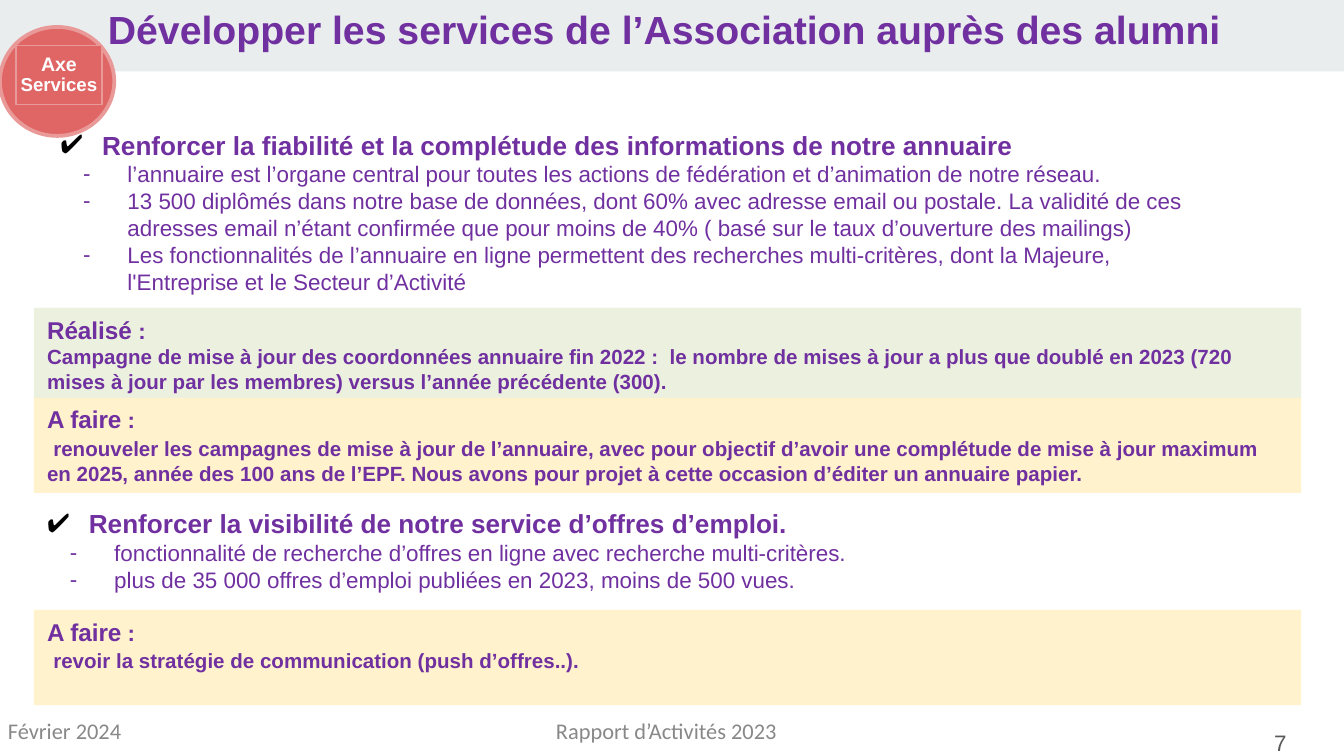
"""Build the slide on alumni services."""
import dataclasses
import typing

import pptx
import pptx.dml.color
import pptx.enum.shapes
import pptx.enum.text
import pptx.oxml.ns
import lxml.etree

Cm = pptx.util.Cm
Pt = pptx.util.Pt
Align = pptx.enum.text.PP_ALIGN
Kind = pptx.enum.shapes.MSO_SHAPE
Anchor = pptx.enum.text.MSO_ANCHOR

HUES = {
    "band": "E9EDEE", "violet": "7030A0", "red": "E06666", "pink": "EA9999",
    "green": "EBF1DE", "cream": "FFF2CC", "white": "FFFFFF", "black": "000000",
    "gray": "888888", "dark": "595959",
}
LEFT, WIDTH = 0.64, 23.95
PAD = (0.25, 0.13, 0.25, 0.13)
FLAT = (0, 0, 0, 0)


@dataclasses.dataclass
class Run:
    """Text with its own size, weight, font and hue."""
    text: str
    size: float
    bold: bool = True
    face: str = "Arial"
    hue: str = "violet"


@dataclasses.dataclass
class Para:
    """Runs that share margins, bullet and alignment."""
    runs: list[Run]
    margin: float = 0
    indent: float = 0
    mark: str = ""
    tint: str = "violet"
    align: typing.Any = Align.LEFT
    space: float = 1.0


@dataclasses.dataclass
class Box:
    """Place, look and text of one object."""
    place: tuple[float, float, float, float]
    paras: list[Para] = dataclasses.field(default_factory=list)
    fill: str = ""
    line: str = ""
    weight: float = 0
    kind: typing.Any = Kind.RECTANGLE
    pad: tuple[float, float, float, float] = PAD
    anchor: typing.Any = Anchor.TOP


def color(name: str) -> pptx.dml.color.RGBColor:
    """Return the colour of a named hue."""
    return pptx.dml.color.RGBColor.from_string(HUES[name])


def apply(target: typing.Any, values: dict[str, typing.Any]) -> None:
    """Set each value on the target."""
    for name, value in values.items():
        setattr(target, name, value)


def bullet(para: typing.Any, item: Para) -> None:
    """Add margins and the bullet mark."""
    qn = pptx.oxml.ns.qn
    props = para._p.get_or_add_pPr()
    props.set("marL", str(Cm(item.margin)))
    props.set("indent", str(Cm(item.indent)))
    if item.mark:
        tint = lxml.etree.SubElement(props, qn("a:buClr"))
        lxml.etree.SubElement(tint, qn("a:srgbClr"), val=HUES[item.tint])
        lxml.etree.SubElement(props, qn("a:buFont"), typeface="Arial")
        lxml.etree.SubElement(props, qn("a:buChar"), char=item.mark)


def write(frame: typing.Any, box: Box) -> None:
    """Fill the frame with the text of the box."""
    sides = ("margin_left", "margin_top", "margin_right", "margin_bottom")
    apply(frame, {side: Cm(gap) for side, gap in zip(sides, box.pad)})
    apply(frame, {"word_wrap": True, "vertical_anchor": box.anchor})
    for rank, item in enumerate(box.paras):
        para = frame.add_paragraph() if rank else frame.paragraphs[0]
        bullet(para, item)
        apply(para, {"alignment": item.align, "line_spacing": item.space})
        for part in item.runs:
            run = para.add_run()
            run.text = part.text
            apply(run.font, {"size": Pt(part.size), "bold": part.bold, "name": part.face})
            run.font.color.rgb = color(part.hue)


def draw(slide: typing.Any, box: Box) -> None:
    """Draw one box on the slide."""
    place = [Cm(size) for size in box.place]
    if box.fill:
        shape = slide.shapes.add_shape(box.kind, *place)
        shape.shadow.inherit = False
        shape.fill.solid()
        shape.fill.fore_color.rgb = color(box.fill)
        if box.line:
            shape.line.color.rgb = color(box.line)
            shape.line.width = Pt(box.weight)
        else:
            shape.line.fill.background()
    else:
        shape = slide.shapes.add_textbox(*place)
    if box.paras:
        write(shape.text_frame, box)


def label(text: str, place: tuple[float, float, float, float], align: typing.Any = Align.LEFT) -> Box:
    """Return a footer label."""
    return Box(place, [Para([Run(text, 12, False, "Calibri", "gray")], align=align)], pad=FLAT)


def panel(top: float, tall: float, fill: str, head: Run, colon: Run, body: list[Run]) -> Box:
    """Return a filled panel with a heading and a body."""
    return Box((LEFT, top, WIDTH, tall), [Para([head, colon]), Para(body)], fill)


def task(top: float, text: str) -> Box:
    """Return a panel for work still to do."""
    return panel(top, 1.8, "cream", Run("A faire", 13), Run(" :", 12), [Run(" ", 12), Run(text, 11)])


def goal(place: tuple[float, float, float, float], head: str, points: list[str]) -> Box:
    """Return a ticked goal with its dashed points."""
    paras = [Para([Run(head, 14)], 0.79, -0.79, "✔", "black")]
    paras += [Para([Run(point, 12, False)], 1.27, -0.84, "-") for point in points]
    return Box(place, paras)


BOXES = [
    Box((0, 0, 25.4, 1.35), fill="band"),
    Box((24, 13.79, 0.82, 0.51), [Para([Run("7", 12, False, hue="dark")], 0.08)], pad=FLAT),
    Box((2.01, 0.05, 21.18, 0.91),
        [Para([Run("Développer les services de l’Association auprès des alumni", 21)], 0.03)],
        pad=(0, 0.05, 0, 0)),
    Box((0, 0.51, 2.16, 2.06), fill="red", line="pink", weight=2, kind=Kind.OVAL),
    Box((0.3, 0.86, 1.63, 1.12),
        [Para([Run("Axe ", 10.5, hue="white"), Run("Services", 10, hue="white")],
              align=Align.CENTER, space=0.9)],
        "red", "pink", 0.75, pad=FLAT, anchor=Anchor.MIDDLE),
    panel(5.82, 1.75, "green", Run("Réalisé ", 13), Run(":", 12), [Run(
        "Campagne de mise à jour des coordonnées annuaire fin 2022 :  le nombre de mises à jour "
        "a plus que doublé en 2023 (720 mises à jour par les membres) versus l’année précédente (300).", 11)]),
    label("Février 2024", (0.15, 13.56, 5.54, 0.51)),
    label("Rapport d’Activités 2023", (6.78, 13.56, 11.63, 0.51), Align.CENTER),
    task(7.52, "renouveler les campagnes de mise à jour de l’annuaire, avec pour objectif d’avoir une "
         "complétude de mise à jour maximum en 2025, année des 100 ans de l’EPF. Nous avons pour "
         "projet à cette occasion d’éditer un annuaire papier."),
    goal((0.89, 2.31, 22.3, 3.43),
         "Renforcer la fiabilité et la complétude des informations de notre annuaire",
         ["l’annuaire est l’organe central pour toutes les actions de fédération et d’animation de notre réseau.",
          "13 500 diplômés dans notre base de données, dont 60% avec adresse email ou postale. La validité "
          "de ces adresses email n’étant confirmée que pour moins de 40% ( basé sur le taux d’ouverture "
          "des mailings)",
          "Les fonctionnalités de l’annuaire en ligne permettent des recherches multi-critères, dont la "
          "Majeure, l'Entreprise et le Secteur d’Activité"]),
    goal((LEFT, 9.47, WIDTH, 1.88), "Renforcer la visibilité de notre service d’offres d’emploi.",
         ["fonctionnalité de recherche d’offres en ligne avec recherche multi-critères.",
          "plus de 35 000 offres d’emploi publiées en 2023, moins de 500 vues."]),
    task(11.53, "revoir la stratégie de communication (push d’offres..)."),
]


def main() -> None:
    """Make and save the deck."""
    deck = pptx.Presentation()
    apply(deck, {"slide_width": Cm(25.4), "slide_height": Cm(14.29)})
    slide = deck.slides.add_slide(deck.slide_layouts[6])
    for box in BOXES:
        draw(slide, box)
    deck.save("out.pptx")


if __name__ == "__main__":
    main()
